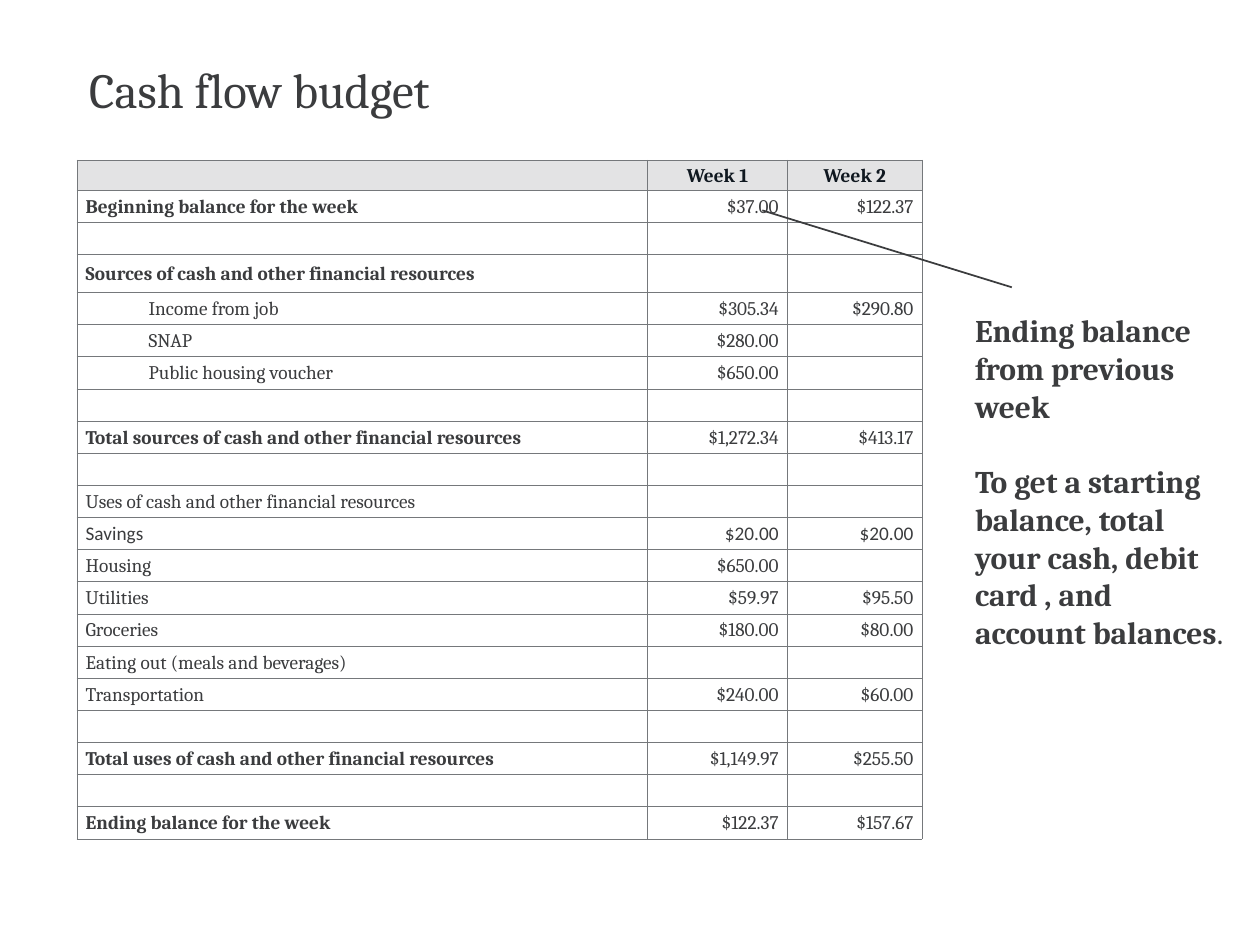
from pptx import Presentation, oxml
from pptx import util as u
from pptx.dml import color
from pptx.enum import shapes, text
from pptx.oxml import ns, xmlchemy

ALIGN = text.PP_ALIGN
INK, HEAD_INK, HEAD_FILL, GRID = "3B3C3E", "101820", "E3E3E4", "75787B"
SERIF, SANS = "Cambria", "Calibri"

COLUMNS = [4.53, 1.11, 1.07]
TABLE_HEIGHT, HEADER_HEIGHT, SOURCES_HEIGHT = 5.39, 0.24, 0.3
BLANK = ("", "", "", {})
BOLD, INDENT = {"bold": True}, {"indent": 0.5}
ROWS = [
    ("Beginning balance for the week", "$37.00", "$122.37", BOLD),
    BLANK,
    ("Sources of cash and other financial resources", "", "", BOLD),
    ("Income from job", "$305.34", "$290.80", INDENT),
    ("SNAP", "$280.00", "", INDENT),
    ("Public housing voucher", "$650.00", "", INDENT),
    BLANK,
    ("Total sources of cash and other financial resources", "$1,272.34", "$413.17", BOLD),
    BLANK,
    ("Uses of cash and other financial resources", "", "", {}),
    ("Savings", "$20.00", "$20.00", {"font": SANS}),
    ("Housing", "$650.00", "", {}),
    ("Utilities", "$59.97", "$95.50", {}),
    ("Groceries", "$180.00", "$80.00", {}),
    ("Eating out (meals and beverages)", "", "", {}),
    ("Transportation", "$240.00", "$60.00", {}),
    BLANK,
    ("Total uses of cash and other financial resources", "$1,149.97", "$255.50", BOLD),
    BLANK,
    ("Ending balance for the week", "$122.37", "$157.67", BOLD),
]


def rgb(hex_string):
    return color.RGBColor.from_string(hex_string)


def write(p, content, size=11, font=SERIF, ink=INK, bold=False, align=ALIGN.LEFT,
          indent=0, spacing=None, before=0):
    p.alignment = align
    p.space_before = u.Pt(before)
    if spacing:
        p.line_spacing = spacing
    if indent:
        p._p.get_or_add_pPr().set("marL", str(u.Inches(indent)))
    if not content:
        end = xmlchemy.OxmlElement("a:endParaRPr")
        end.set("sz", str(size * 100))
        p._p.append(end)
        return
    r = p.add_run()
    r.text = content
    r.font.size = u.Pt(size)
    r.font.name = font
    r.font.bold = bold
    r.font.color.rgb = rgb(ink)


class Deck:
    def __init__(self, width, height):
        self.prs = Presentation()
        self.prs.slide_width, self.prs.slide_height = u.Inches(width), u.Inches(height)
        self.s = self.prs.slides.add_slide(self.prs.slide_layouts[6])

    def textbox(self, x, y, w, h, anchor=text.MSO_ANCHOR.TOP):
        sp = self.s.shapes.add_textbox(*map(u.Inches, (x, y, w, h)))
        tf = sp.text_frame
        tf.word_wrap = True
        tf.vertical_anchor = anchor
        return tf

    def line(self, x1, y1, x2, y2):
        c = self.s.shapes.add_connector(shapes.MSO_CONNECTOR.STRAIGHT,
                                        *map(u.Inches, (x1, y1, x2, y2)))
        c.line.color.rgb = rgb(INK)
        c.line.width = u.Pt(1)
        c._element.spPr.append(xmlchemy.OxmlElement("a:effectLst"))

    def borders(self, cell):
        tc_pr = cell._tc.get_or_add_tcPr()
        for side in "LRTB":
            tc_pr.append(oxml.parse_xml(
                f'<a:ln{side} {ns.nsdecls("a")} w="{u.Pt(0.25)}"><a:solidFill>'
                f'<a:srgbClr val="{GRID}"/></a:solidFill></a:ln{side}>'))

    def cell(self, cell, content, fill=None, **style):
        self.borders(cell)
        cell.margin_left = cell.margin_right = u.Inches(0.07)
        cell.margin_top = cell.margin_bottom = 0
        cell.vertical_anchor = text.MSO_ANCHOR.MIDDLE
        if fill:
            cell.fill.solid()
            cell.fill.fore_color.rgb = rgb(fill)
        else:
            cell.fill.background()
        write(cell.text_frame.paragraphs[0], content, spacing=1.07, **style)

    def budget_table(self, x, y):
        frame = self.s.shapes.add_table(
            len(ROWS) + 1, len(COLUMNS),
            *map(u.Inches, (x, y, sum(COLUMNS), TABLE_HEIGHT)))
        table = frame.table
        table.first_row = table.horz_banding = False
        for column, width in zip(table.columns, COLUMNS):
            column.width = u.Inches(width)
        plain_height = (TABLE_HEIGHT - HEADER_HEIGHT - SOURCES_HEIGHT) / (len(ROWS) - 1)
        for row in table.rows:
            row.height = u.Inches(plain_height)
        table.rows[0].height = u.Inches(HEADER_HEIGHT)
        table.rows[3].height = u.Inches(SOURCES_HEIGHT)

        for i, heading in enumerate(["", "Week 1", "Week 2"]):
            self.cell(table.cell(0, i), heading, fill=HEAD_FILL, ink=HEAD_INK,
                      bold=True, align=ALIGN.CENTER)
        for i, (label, *amounts, style) in enumerate(ROWS, 1):
            self.cell(table.cell(i, 0), label, **style)
            for j, amount in enumerate(amounts, 1):
                self.cell(table.cell(i, j), amount, align=ALIGN.RIGHT,
                          font=style.get("font", SERIF))


def main():
    deck = Deck(10, 7.5)
    title = deck.textbox(0.61, 0.3, 8.79, 0.81, text.MSO_ANCHOR.MIDDLE)
    write(title.paragraphs[0], "Cash flow budget", size=28)
    deck.budget_table(0.61, 1.27)
    deck.line(6.05, 1.67, 8.03, 2.28)

    note = deck.textbox(7.64, 2.42, 2.19, 3.43)
    write(note.paragraphs[0], "Ending balance from previous week", size=18, bold=True)
    p = note.add_paragraph()
    write(p, "To get a starting balance, total your cash, debit card , and account balances",
          size=18, bold=True, before=21.5)
    write(p, ".", size=18, before=21.5)
    deck.prs.save("out.pptx")


if __name__ == "__main__":
    main()
